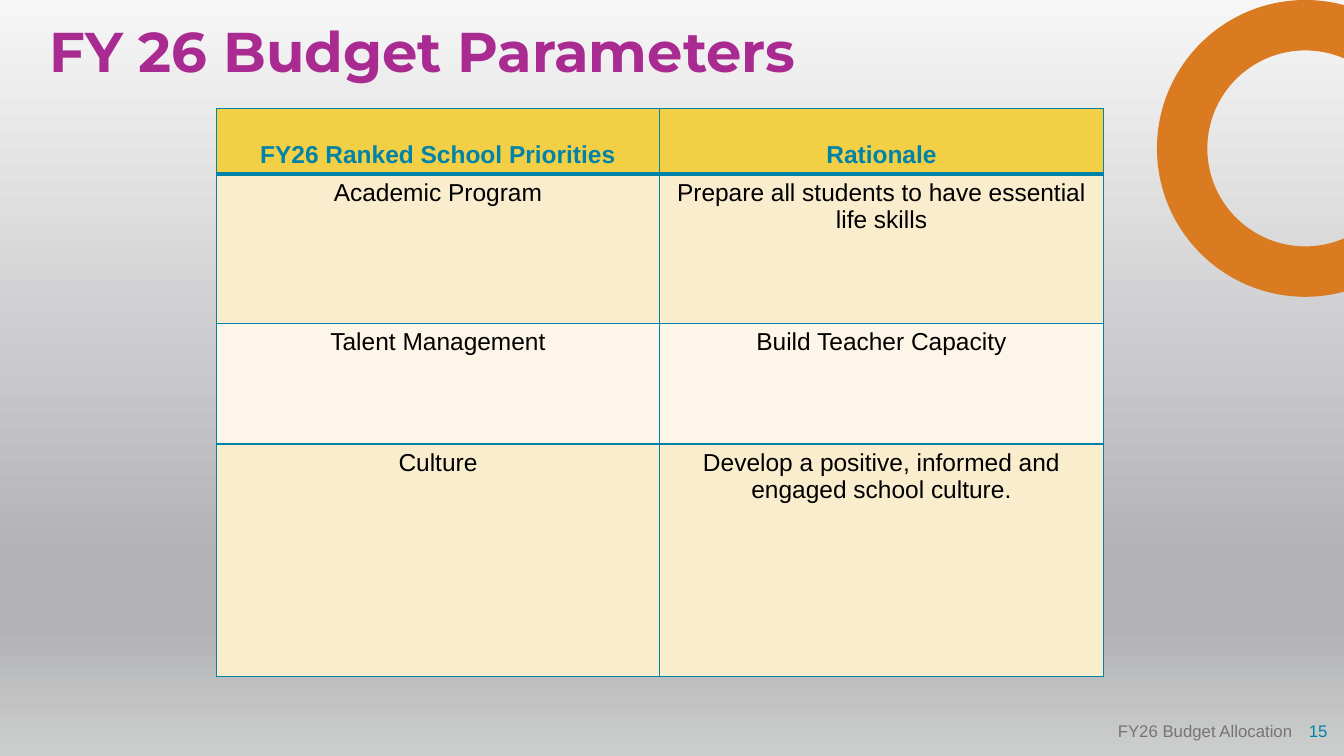
import math
from dataclasses import dataclass

import pptx
import pptx.dml.color
import pptx.enum.text
import pptx.oxml
import pptx.oxml.ns
import pptx.slide
import pptx.table
import pptx.text.text
import pptx.util

Pt = pptx.util.Pt
RGBColor = pptx.dml.color.RGBColor
Align = pptx.enum.text.PP_ALIGN
Anchor = pptx.enum.text.MSO_ANCHOR
qn = pptx.oxml.ns.qn
DECL = pptx.oxml.ns.nsdecls("a")

BLACK = RGBColor(0x00, 0x00, 0x00)
TEAL = RGBColor(0x00, 0x83, 0xA9)
PURPLE = RGBColor(0xA9, 0x2A, 0x91)
ORANGE = RGBColor(0xDA, 0x7B, 0x22)
GOLD = RGBColor(0xF3, 0xCF, 0x45)
SAND = RGBColor(0xFA, 0xED, 0xCE)
CREAM = RGBColor(0xFD, 0xF6, 0xE8)
GRAY = RGBColor(0x75, 0x75, 0x75)
STOPS = [
    (0, RGBColor(0xF6, 0xF6, 0xF6)),
    (74, RGBColor(0xB3, 0xB3, 0xB5)),
    (83, RGBColor(0xB3, 0xB3, 0xB5)),
    (100, RGBColor(0xCC, 0xCD, 0xCD)),
]
WIDTH, HEIGHT = 960, 540
THIN, THICK = 1, 3


@dataclass
class Label:
    text: str
    left: float
    top: float
    width: float
    height: float
    size: float
    color: RGBColor
    font: str = "Arial"
    bold: bool = False
    align: Align = Align.RIGHT
    anchor: Anchor = Anchor.MIDDLE
    space: float = 1.0
    inset: float = 0


@dataclass
class Row:
    texts: tuple[str, str]
    height: float
    fill: RGBColor
    head: bool = False


LABELS = [
    Label("FY 26 Budget Parameters", 35.3, 17, 611.3, 54, 40, PURPLE,
          "Montserrat", True, Align.LEFT, Anchor.TOP, 0.9),
    Label("15", 732.2, 507.6, 216, 28.8, 12, TEAL),
    Label("FY26 Budget Allocation", 776.9, 507.6, 153.4, 28.8, 12, GRAY,
          inset=7.2),
]
ROWS = [
    Row(("FY26 Ranked School Priorities", "Rationale"), 46.8, GOLD, True),
    Row(("Academic Program",
         "Prepare all students to have essential life skills"), 106.6, SAND),
    Row(("Talent Management", "Build Teacher Capacity"), 86.4, CREAM),
    Row(("Culture",
         "Develop a positive, informed and engaged school culture."),
        166.3, SAND),
]


def style(para: pptx.text.text._Paragraph, size: float, color: RGBColor,
          font: str, bold: bool, align: Align) -> None:
    para.alignment = align
    para.font.size = Pt(size)
    para.font.color.rgb = color
    para.font.name = font
    para.font.bold = bold


def shade(slide: pptx.slide.Slide) -> None:
    """Give the slide its vertical gradient background."""
    fill = slide.background.fill
    fill.gradient()
    fill.gradient_angle = 270
    stops = slide.element.find(".//" + qn("a:gsLst"))
    for old in list(stops):
        stops.remove(old)
    for place, color in STOPS:
        stops.append(pptx.oxml.parse_xml(
            f'<a:gs {DECL} pos="{place * 1000}">'
            f'<a:srgbClr val="{color}"/></a:gs>'))


def draw_ring(slide: pptx.slide.Slide, x: float, y: float,
              outer: float, inner: float) -> None:
    """Draw a ring of Bezier curves cut off at the right slide edge."""
    def arc(radius: float) -> list[tuple[int, int]]:
        """List the start, then two controls and an end for each curve."""
        def spot(turn: float, pull: float = 0) -> tuple[int, int]:
            cos, sin = math.cos(turn), math.sin(turn)
            return (Pt(x + radius * (cos - pull * sin)),
                    Pt(y + radius * (sin + pull * cos)))

        first = math.acos((WIDTH - x) / radius)
        turns = [first, math.pi / 2, math.pi, math.pi * 1.5,
                 math.tau - first]
        spots = [spot(first)]
        for a, b in zip(turns, turns[1:]):
            pull = 4 / 3 * math.tan((b - a) / 4)
            spots += [spot(a, pull), spot(b, -pull), spot(b)]
        return spots

    rim, hole = arc(outer), arc(inner)[::-1]
    path = slide.shapes.build_freeform(*rim[0])
    path.add_line_segments(rim[1:] + hole, close=True)
    ring = path.convert_to_shape()
    lines = list(ring.element.iter(qn("a:lnTo")))
    cut = len(rim) - 1
    for part in (lines[:cut], lines[cut + 1:]):
        for i in range(0, len(part), 3):
            curve = pptx.oxml.parse_xml(f"<a:cubicBezTo {DECL}/>")
            part[i].addprevious(curve)
            for line in part[i:i + 3]:
                curve.append(line[0])
                line.getparent().remove(line)
    ring.shadow.inherit = False
    ring.fill.solid()
    ring.fill.fore_color.rgb = ORANGE
    ring.line.fill.background()


def draw_label(slide: pptx.slide.Slide, label: Label) -> None:
    box = slide.shapes.add_textbox(Pt(label.left), Pt(label.top),
                                   Pt(label.width), Pt(label.height))
    frame = box.text_frame
    frame.word_wrap = True
    frame.vertical_anchor = label.anchor
    frame.margin_left = frame.margin_right = Pt(label.inset)
    frame.margin_top = frame.margin_bottom = Pt(label.inset / 2)
    para = frame.paragraphs[0]
    para.text = label.text
    para.line_spacing = label.space
    style(para, label.size, label.color, label.font, label.bold, label.align)


def edge(cell: pptx.table._Cell, top: float, bottom: float) -> None:
    """Add the four borders of a cell, which must precede its fill."""
    props = cell._tc.get_or_add_tcPr()
    sides = {"L": THIN, "R": THIN, "T": top, "B": bottom}
    for side, width in sides.items():
        props.append(pptx.oxml.parse_xml(
            f'<a:ln{side} {DECL} w="{Pt(width)}" cmpd="sng">'
            f'<a:solidFill><a:srgbClr val="{TEAL}"/></a:solidFill>'
            f'<a:prstDash val="solid"/></a:ln{side}>'))


def draw_table(slide: pptx.slide.Slide, rows: list[Row]) -> None:
    total = sum(row.height for row in rows)
    table = slide.shapes.add_table(len(rows), 2, Pt(154.5), Pt(77.4),
                                   Pt(633.6), Pt(total)).table
    for r, row in enumerate(rows):
        table.rows[r].height = Pt(row.height)
        top = THICK if r and rows[r - 1].head else THIN
        for c, text in enumerate(row.texts):
            cell = table.cell(r, c)
            edge(cell, top, THICK if row.head else THIN)
            cell.fill.solid()
            cell.fill.fore_color.rgb = row.fill
            cell.vertical_anchor = Anchor.BOTTOM if row.head else Anchor.TOP
            para = cell.text_frame.paragraphs[0]
            para.text = text
            style(para, 17.5, TEAL if row.head else BLACK, "Arial",
                  row.head, Align.CENTER)


def main() -> None:
    deck = pptx.Presentation()
    deck.slide_width, deck.slide_height = Pt(WIDTH), Pt(HEIGHT)
    slide = deck.slides.add_slide(deck.slide_layouts[6])
    shade(slide)
    draw_ring(slide, 932.4, 106, 106, 70)
    draw_table(slide, ROWS)
    for label in LABELS:
        draw_label(slide, label)
    deck.save("out.pptx")


if __name__ == "__main__":
    main()
